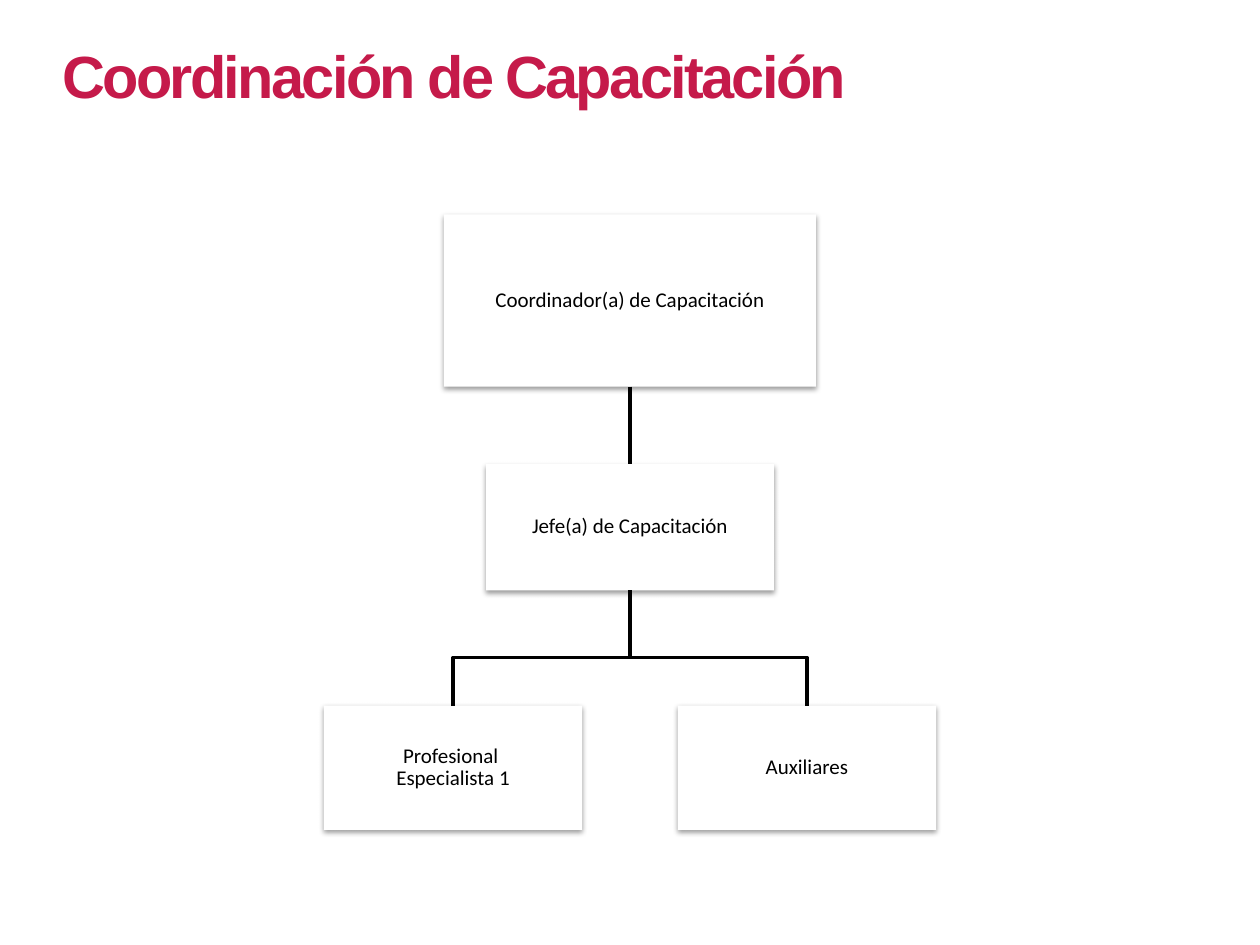
"""Build the organisation chart slide of the training coordination team."""
from lxml import etree
from pptx import Presentation
from pptx.dml.color import RGBColor
from pptx.enum.shapes import MSO_CONNECTOR, MSO_SHAPE
from pptx.enum.text import MSO_ANCHOR, MSO_AUTO_SIZE, PP_ALIGN
from pptx.oxml.ns import qn
from pptx.util import Pt

RECTANGLE = MSO_SHAPE.RECTANGLE
STRAIGHT = MSO_CONNECTOR.STRAIGHT
MIDDLE, TOP = MSO_ANCHOR.MIDDLE, MSO_ANCHOR.TOP
CENTER, LEFT = PP_ALIGN.CENTER, PP_ALIGN.LEFT
FIT_SHAPE = MSO_AUTO_SIZE.SHAPE_TO_FIT_TEXT
BOTTOM_SITE, TOP_SITE = 2, 0

COLORS = {"title": "C51A4A", "box": "FFFFFF", "ink": "000000"}
TITLE = "Coordinación de Capacitación"
CENTER_X, BRANCH_OFFSET, BRANCH_Y = 360, 101.1, 375.8
LEVELS = [
    {"top": 122.5, "width": 212.6, "height": 98.5,
     "boxes": [(0, ["Coordinador(a) de Capacitación"])]},
    {"top": 265, "width": 164.4, "height": 72.3,
     "boxes": [(0, ["Jefe(a) de Capacitación"])]},
    {"top": 403.2, "width": 147.6, "height": 71,
     "boxes": [(-BRANCH_OFFSET, ["Profesional ", "Especialista 1"]),
               (BRANCH_OFFSET, ["Auxiliares"])]},
]


def color(name):
    return RGBColor.from_string(COLORS[name])


def add_title(slide):
    title = slide.shapes.title
    title.left, title.top, title.width, title.height = Pt(28.4), Pt(18.7), Pt(501.8), Pt(49.7)
    frame = title.text_frame
    frame.auto_size, frame.vertical_anchor = FIT_SHAPE, TOP
    paragraph = frame.paragraphs[0]
    paragraph.alignment = LEFT
    run = paragraph.add_run()
    run.text = TITLE
    run.font.name, run.font.size, run.font.bold = "Arial", Pt(34), True
    run.font.color.rgb = color("title")
    run.font._element.set("spc", "-150")


def add_shadow(shape):
    shape.shadow.inherit = False
    effects = shape._element.spPr.find(qn("a:effectLst"))
    shadow = etree.SubElement(effects, qn("a:outerShdw"), blurRad=str(Pt(3.1)),
                              dist=str(Pt(1.6)), dir="5400000", rotWithShape="0")
    shade = etree.SubElement(shadow, qn("a:srgbClr"), val=COLORS["ink"])
    etree.SubElement(shade, qn("a:alpha"), val="38000")


def add_box(slide, level, offset, lines):
    left = CENTER_X + offset - level["width"] / 2
    box = slide.shapes.add_shape(RECTANGLE, Pt(left), Pt(level["top"]),
                                 Pt(level["width"]), Pt(level["height"]))
    box.fill.solid()
    box.fill.fore_color.rgb = color("box")
    box.line.fill.background()
    add_shadow(box)
    frame = box.text_frame
    frame.word_wrap, frame.vertical_anchor = True, MIDDLE
    frame.margin_left = frame.margin_right = frame.margin_top = frame.margin_bottom = Pt(0.6)
    paragraph = frame.paragraphs[0]
    paragraph.alignment, paragraph.line_spacing = CENTER, 0.9
    for index, line in enumerate(lines):
        if index:
            paragraph.add_line_break()
        run = paragraph.add_run()
        run.text = line
        run.font.name, run.font.size = "Calibri", Pt(12)
        run.font.color.rgb = color("ink")
    return box


def style_line(shape):
    shape.line.color.rgb = color("ink")
    shape.line.width = Pt(2)


def add_stem(slide, parent, child):
    stem = slide.shapes.add_connector(STRAIGHT, 0, 0, 0, 0)
    stem.begin_connect(parent, BOTTOM_SITE)
    stem.end_connect(child, TOP_SITE)
    style_line(stem)
    etree.SubElement(stem._element.spPr, qn("a:effectLst"))


def add_branch(slide, parent, child):
    start_x = parent.left + parent.width // 2
    end_x = child.left + child.width // 2
    builder = slide.shapes.build_freeform(start_x, parent.top + parent.height)
    builder.add_line_segments([(start_x, Pt(BRANCH_Y)), (end_x, Pt(BRANCH_Y)),
                               (end_x, child.top)], close=False)
    branch = builder.convert_to_shape()
    branch.fill.background()
    branch.shadow.inherit = False
    style_line(branch)


def main():
    presentation = Presentation()
    presentation.slide_width, presentation.slide_height = Pt(720), Pt(540)
    slide = presentation.slides.add_slide(presentation.slide_layouts[5])
    add_title(slide)
    (coordinator,), (chief,), staff = [
        [add_box(slide, level, offset, lines) for offset, lines in level["boxes"]]
        for level in LEVELS]
    add_stem(slide, coordinator, chief)
    for member in staff:
        add_branch(slide, chief, member)
    presentation.save("out.pptx")


if __name__ == "__main__":
    main()
